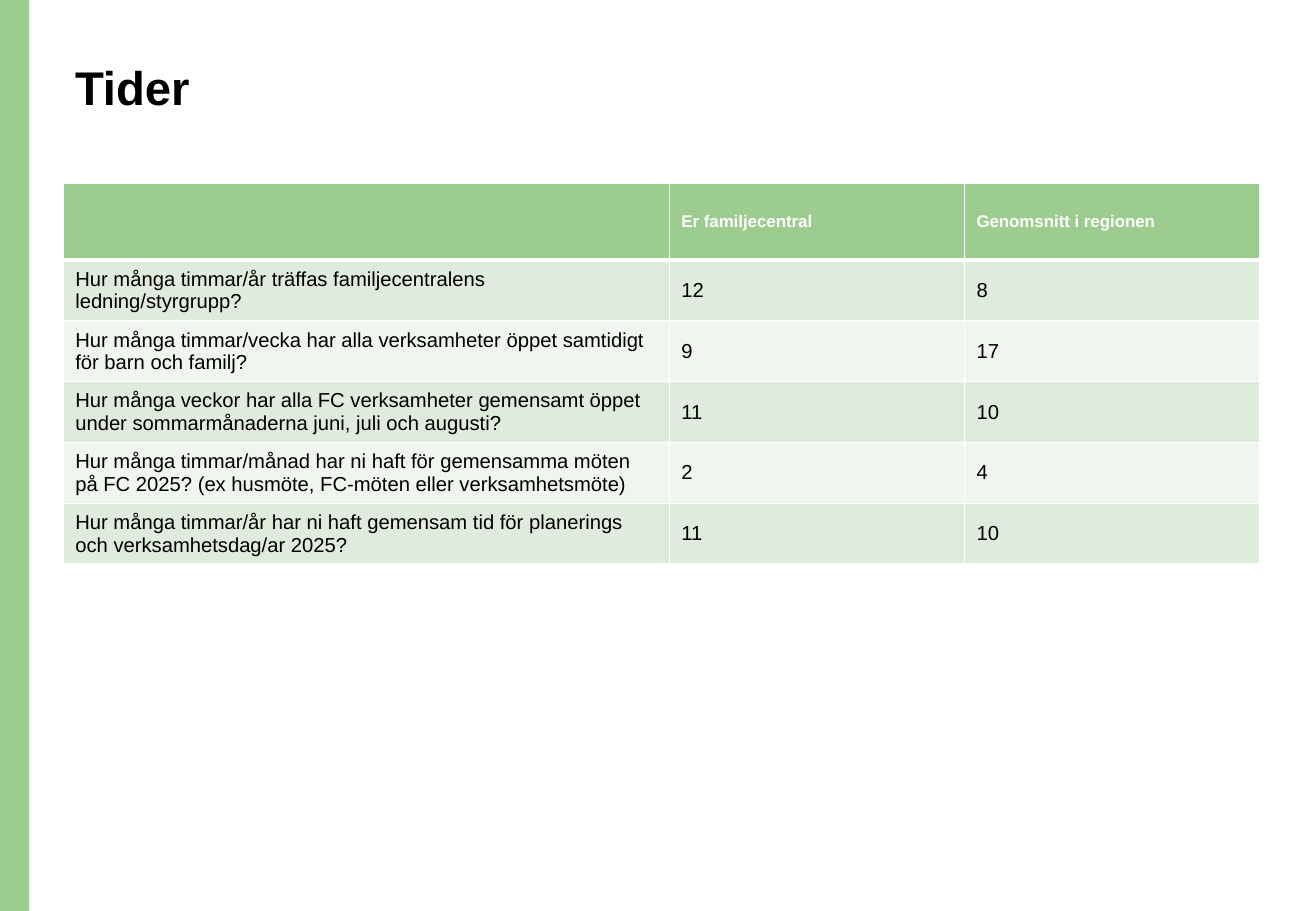
from dataclasses import dataclass

from lxml.etree import SubElement
from pptx import Presentation
from pptx.dml.color import RGBColor as RGB
from pptx.enum.shapes import MSO_SHAPE as Shape
from pptx.enum.text import MSO_ANCHOR as Anchor
from pptx.oxml.ns import qn
from pptx.util import Cm, Pt


@dataclass(frozen=True)
class Theme:
    font: str = "Arial"
    green: str = "9DCC8F"
    bands: tuple = ("DFECDB", "EFF6EE")
    white: str = "FFFFFF"
    black: str = "000000"
    title: int = 28
    head: int = 10
    body: int = 12


theme = Theme()


def write(frame, text, size, color, bold=False):
    run = frame.paragraphs[0].add_run()
    run.text = text
    font = run.font
    font.name, font.size, font.bold = theme.font, Pt(size), bold
    font.color.rgb = RGB.from_string(color)


def frame_cell(cell, base):
    """Draw white cell borders, with the bottom one base points wide."""
    props = cell._tc.get_or_add_tcPr()
    widths = {"a:lnL": 1, "a:lnR": 1, "a:lnT": 1, "a:lnB": base}
    for tag, width in widths.items():
        line = SubElement(props, qn(tag), w=str(Pt(width)))
        fill = SubElement(line, qn("a:solidFill"))
        SubElement(fill, qn("a:srgbClr"), val=theme.white)


deck = Presentation()
deck.slide_width, deck.slide_height = Cm(27.51), Cm(19.05)
slide = deck.slides.add_slide(deck.slide_layouts[6])
shapes = slide.shapes

# Green edge
edge = shapes.add_shape(Shape.RECTANGLE, 0, 0, Cm(0.61), deck.slide_height)
edge.shadow.inherit = False
edge.fill.solid()
edge.fill.fore_color.rgb = RGB.from_string(theme.green)
edge.line.fill.background()

# Title
left = Cm(1.32)
title = shapes.add_textbox(left, Cm(1.22), Cm(23.72), Cm(2.59)).text_frame
title.word_wrap = True
title.paragraphs[0].line_spacing = 0.9
write(title, "Tider", theme.title, theme.black, True)

# Table of hours
rows = [
    ("", "Er familjecentral", "Genomsnitt i regionen"),
    ("Hur många timmar/år träffas familjecentralens ledning/styrgrupp?", "12", "8"),
    ("Hur många timmar/vecka har alla verksamheter öppet samtidigt "
     "för barn och familj?", "9", "17"),
    ("Hur många veckor har alla FC verksamheter gemensamt öppet "
     "under sommarmånaderna juni, juli och augusti?", "11", "10"),
    ("Hur många timmar/månad har ni haft för gemensamma möten "
     "på FC 2025? (ex husmöte, FC-möten eller verksamhetsmöte)", "2", "4"),
    ("Hur många timmar/år har ni haft gemensam tid för planerings "
     "och verksamhetsdag/ar 2025?", "11", "10"),
]
widths = [Cm(12.67), Cm(6.17), Cm(6.17)]
heights = [Cm(1.6)] + [Cm(1.2)] * (len(rows) - 1)
table = shapes.add_table(len(rows), len(widths), left, Cm(3.84),
                         sum(widths), sum(heights)).table
for col, width in zip(table.columns, widths):
    col.width = width

for r, (row, height) in enumerate(zip(rows, heights)):
    table.rows[r].height = height
    head = r == 0
    shade = theme.green if head else theme.bands[(r - 1) % 2]
    size = theme.head if head else theme.body
    color = theme.white if head else theme.black
    for c, text in enumerate(row):
        cell = table.cell(r, c)
        cell.vertical_anchor = Anchor.MIDDLE
        frame_cell(cell, 3 if head else 1)
        cell.fill.solid()
        cell.fill.fore_color.rgb = RGB.from_string(shade)
        if text:
            write(cell.text_frame, text, size, color, head)

deck.save("out.pptx")
